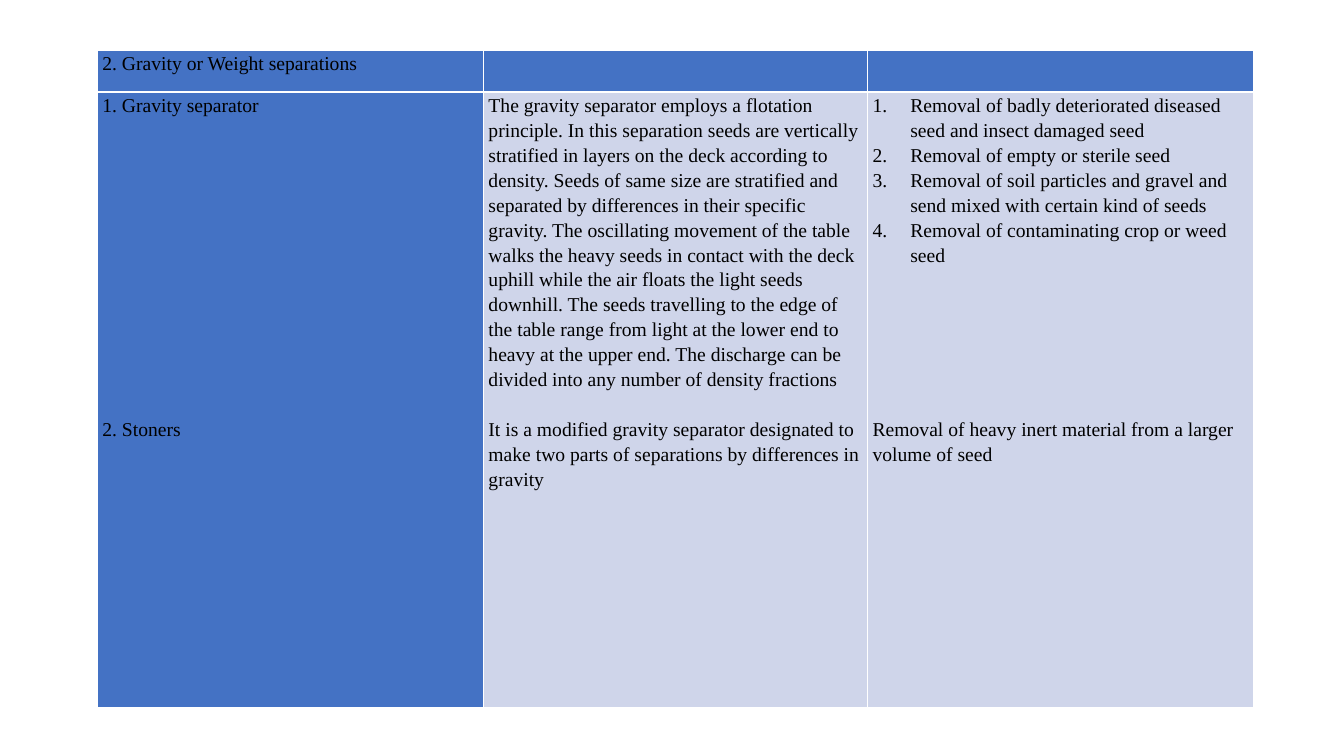
from pptx import Presentation
from pptx.dml.color import RGBColor
from pptx.oxml import parse_xml
from pptx.oxml.ns import nsdecls
from pptx.util import Cm, Pt


def paint(fill, tone):
    fill.solid()
    fill.fore_color.rgb = RGBColor.from_string(tone)


def edge(cell):
    props = cell._tc.get_or_add_tcPr()
    for i, side in enumerate("LRTB"):
        props.insert(i, parse_xml(
            f'<a:ln{side} {nsdecls("a")} w="12700"><a:solidFill>'
            f'<a:srgbClr val="FFFFFF"/></a:solidFill></a:ln{side}>'))


BLUE, PALE = "4472C4", "CFD5EA"
LINE = 17.8

uses = [
    "Removal of badly deteriorated diseased seed and insect damaged seed",
    "Removal of empty or sterile seed",
    "Removal of soil particles and gravel and send mixed with certain kind of seeds",
    "Removal of contaminating crop or weed seed",
]
flow = (
    "The gravity separator employs a flotation principle. In this separation "
    "seeds are vertically stratified in layers on the deck according to density. "
    "Seeds of same size are stratified and separated by differences in their "
    "specific gravity. The oscillating movement of the table walks the heavy seeds "
    "in contact with the deck uphill while the air floats the light seeds downhill. "
    "The seeds travelling to the edge of the table range from light at the lower "
    "end to heavy at the upper end. The discharge can be divided into any number "
    "of density fractions"
)
stone = (
    "It is a modified gravity separator designated to make two parts of "
    "separations by differences in gravity"
)
rows = [
    [(["2. Gravity or Weight separations"], 0, BLUE), ([], 0, BLUE), ([], 0, BLUE)],
    [
        (["1. Gravity separator", "2. Stoners"], 12, BLUE),
        ([flow, stone], 1, PALE),
        (uses + ["Removal of heavy inert material from a larger volume of seed"], 6, PALE),
    ],
]

deck = Presentation()
deck.slide_width, deck.slide_height = Cm(33.87), Cm(19.05)
slide = deck.slides.add_slide(deck.slide_layouts[6])

grid = slide.shapes.add_table(2, 3, Cm(2.45), Cm(1.26), Cm(29.14), Cm(16.56)).table
grid.first_row = grid.horz_banding = False
for col, width in zip(grid.columns, (9.73, 9.68, 9.73)):
    col.width = Cm(width)
for row, height in zip(grid.rows, (1.06, 15.5)):
    row.height = Cm(height)

for row, items in zip(grid.rows, rows):
    for cell, (texts, gap, tone) in zip(row.cells, items):
        cell.margin_left = cell.margin_right = Cm(0.13)
        cell.margin_top = cell.margin_bottom = 0
        paint(cell.fill, tone)
        edge(cell)
        cell.text = "\n".join(texts)
        for para in cell.text_frame.paragraphs:
            para.line_spacing = 1.15
            if para.text in uses:
                props = para._p.get_or_add_pPr()
                props.set("marL", str(Cm(0.95)))
                props.set("indent", str(Cm(-0.95)))
                props.append(parse_xml(
                    f'<a:buFont {nsdecls("a")} typeface="+mj-lt"/>'))
                props.append(parse_xml(
                    f'<a:buAutoNum {nsdecls("a")} type="arabicPeriod"/>'))
            para.font.name = "Times New Roman"
            para.font.size = Pt(14)
            para.font.bold = False
            paint(para.font.fill, "000000")
        if gap:
            para.space_before = Pt(gap * LINE)

deck.save("out.pptx")
